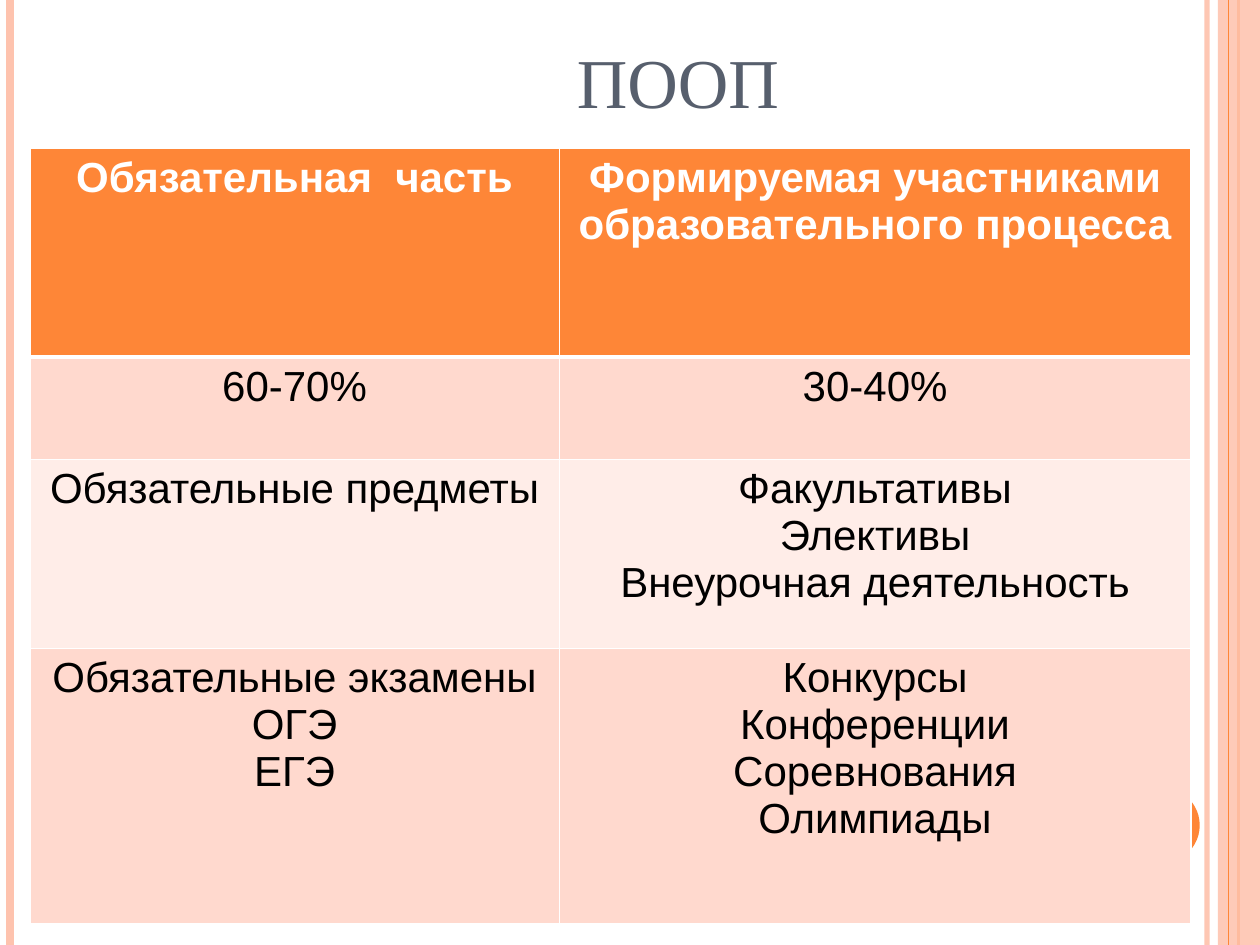
"""Build a slide with a two-column table of the ПООП parts."""
from lxml import etree
from pptx import Presentation
from pptx.dml.color import RGBColor
from pptx.enum.shapes import MSO_CONNECTOR as CONN, MSO_SHAPE as SHAPE
from pptx.enum.text import MSO_ANCHOR as ANCHOR, MSO_AUTO_SIZE as AUTO, PP_ALIGN as ALIGN
from pptx.oxml import parse_xml
from pptx.oxml.ns import nsdecls, qn
from pptx.util import Pt

ORANGE = RGBColor(0xFE, 0x86, 0x37)
PEACH = RGBColor(0xFE, 0xC3, 0xAE)
BAND_DARK = RGBColor(0xFF, 0xD9, 0xCE)
BAND_LIGHT = RGBColor(0xFF, 0xED, 0xE8)
SLATE = RGBColor(0x57, 0x5F, 0x6D)
WHITE = RGBColor(0xFF, 0xFF, 0xFF)
BLACK = RGBColor(0, 0, 0)


def write(tf, text, *, size=24, font="Arial", color=BLACK, bold=False):
    for i, line in enumerate(text.split("\n")):
        p = tf.paragraphs[0] if i == 0 else tf.add_paragraph()
        p.alignment = ALIGN.CENTER
        r = p.add_run()
        r.text = line
        r.font.size, r.font.name, r.font.bold = Pt(size), font, bold
        r.font.color.rgb = color


def set_alpha(sp, percent):
    for clr in sp._element.spPr.iter(qn("a:srgbClr")):
        etree.SubElement(clr, qn("a:alpha")).set("val", str(percent * 1000))


prs = Presentation()
prs.slide_width, prs.slide_height = Pt(720), Pt(540)
s = prs.slides.add_slide(prs.slide_layouts[5])

STRIPES = [(689.8, PEACH, 3, 93), (5.8, PEACH, 4.5, 100), (707.8, ORANGE, 1.5, 100),
           (702, ORANGE, 0.75, 100)]
for i, (x, color, width, alpha) in enumerate(STRIPES):
    if i == 3:
        band = s.shapes.add_shape(SHAPE.RECTANGLE, Pt(696), 0, Pt(24), Pt(540))
        band.shadow.inherit = False
        band.fill.solid()
        band.fill.fore_color.rgb = PEACH
        band.line.fill.background()
        set_alpha(band, 87)
    stripe = s.shapes.add_connector(CONN.STRAIGHT, Pt(x), 0, Pt(x), Pt(540))
    stripe.line.color.rgb = color
    stripe.line.width = Pt(width)
    if alpha < 100:
        set_alpha(stripe, alpha)
    etree.SubElement(stripe._element.spPr, qn("a:effectLst"))

dot = s.shapes.add_shape(SHAPE.OVAL, Pt(642.4), Pt(450), Pt(43.2), Pt(43.2))
dot.shadow.inherit = False
dot.fill.solid()
dot.fill.fore_color.rgb = ORANGE
dot.line.fill.background()

title = s.shapes.title
title.left, title.top, title.width, title.height = Pt(36), Pt(21.6), Pt(588), Pt(52)
tf = title.text_frame
tf.auto_size = AUTO.NONE
tf.vertical_anchor = ANCHOR.BOTTOM
tf.margin_left = Pt(122)
write(tf, "ПООП", size=40, font="Times New Roman", color=SLATE)

ROWS = [
    (119.5, ORANGE, "Обязательная  часть", "Формируемая участниками образовательного процесса"),
    (58.5, BAND_DARK, "60-70%", "30-40%"),
    (108, BAND_LIGHT, "Обязательные предметы", "Факультативы\nЭлективы\nВнеурочная деятельность"),
    (157.5, BAND_DARK, "Обязательные экзамены\nОГЭ\nЕГЭ",
     "Конкурсы\nКонференции\nСоревнования\nОлимпиады"),
]
COL_WIDTHS = [302.6, 360.9]
table = s.shapes.add_table(len(ROWS), len(COL_WIDTHS), Pt(17), Pt(84.5),
                           Pt(sum(COL_WIDTHS)), Pt(sum(row[0] for row in ROWS))).table
for col, width in zip(table.columns, COL_WIDTHS):
    col.width = Pt(width)
for i, (height, fill, *texts) in enumerate(ROWS):
    table.rows[i].height = Pt(height)
    header = i == 0
    for j, text in enumerate(texts):
        cell = table.cell(i, j)
        cell.fill.solid()
        cell.fill.fore_color.rgb = fill
        write(cell.text_frame, text, color=WHITE if header else BLACK, bold=header)
        widths = {"L": 1, "R": 1, "T": 3 if i == 1 else 1, "B": 3 if header else 1}
        for k, (side, width) in enumerate(widths.items()):
            cell._tc.get_or_add_tcPr().insert(k, parse_xml(
                f'<a:ln{side} {nsdecls("a")} w="{Pt(width)}"><a:solidFill>'
                f'<a:srgbClr val="{WHITE}"/></a:solidFill></a:ln{side}>'))

prs.save("out.pptx")
